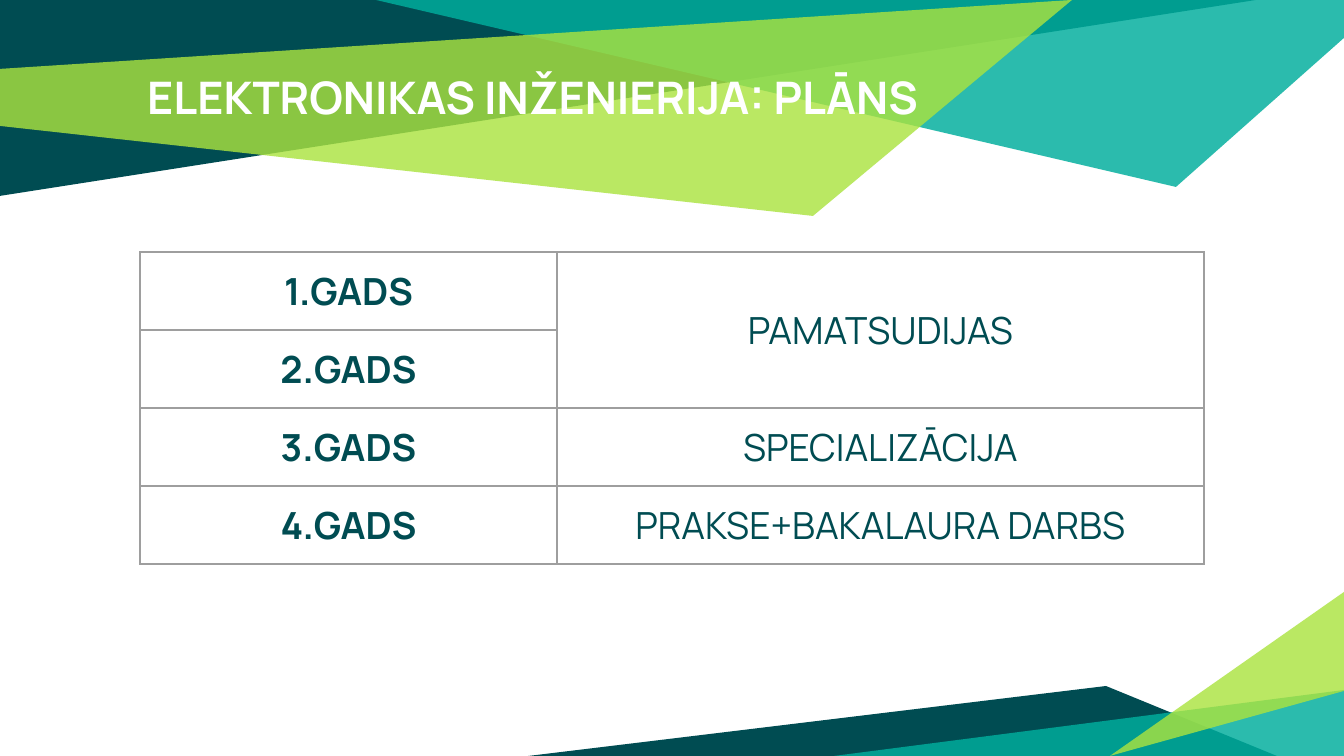
"""Build the study plan slide for electronics engineering."""
from lxml import etree
from pptx import Presentation
from pptx.dml.color import RGBColor
from pptx.enum.text import MSO_ANCHOR, PP_ALIGN
from pptx.oxml.ns import qn
from pptx.util import Pt

MIDDLE = MSO_ANCHOR.MIDDLE
CENTER = PP_ALIGN.CENTER
PX = 914400 / 134.4
FONT = "Manrope"
DARK, TEAL, LIME = "004C52", "00AE9D", "ABE33F"
WHITE, GREY = "FFFFFF", "9E9E9E"
PAD = round(13.44 * PX)


def paint(fill, color):
    fill.solid()
    fill.fore_color.rgb = RGBColor.from_string(color)


def write(para, text, size, color, bold):
    run = para.add_run()
    run.text = text
    run.font.name = FONT
    run.font.size = Pt(size)
    run.font.bold = bold
    paint(run.font.fill, color)


deck = Presentation()
deck.slide_width, deck.slide_height = round(1344 * PX), round(756 * PX)
slide = deck.slides.add_slide(deck.slide_layouts[6])
paint(slide.background.fill, WHITE)

shards = [
    (DARK, 100, [(0, 0), (0, 196), (1256, 0)]),
    (TEAL, 83, [(376, 0), (1176, 187), (1344, 38), (1344, 0)]),
    (LIME, 81, [(0, 69), (0, 126), (813, 216), (1072, 0)]),
    (DARK, 100, [(528, 756), (1277, 756), (1106, 686)]),
    (TEAL, 83, [(1344, 690), (1344, 756), (834, 756)]),
    (LIME, 81, [(1344, 691), (1344, 592), (1110, 756)]),
]
for color, alpha, points in shards:
    pen = slide.shapes.build_freeform(*points[0], scale=PX)
    pen.add_line_segments(points[1:], close=True)
    shard = pen.convert_to_shape()
    shard.shadow.inherit = False
    shard.line.fill.background()
    paint(shard.fill, color)
    if alpha < 100:
        tint = shard.fill._xPr.find(qn("a:solidFill"))[0]
        etree.SubElement(tint, qn("a:alpha"), val=str(alpha * 1000))

box = [round(n * PX) for n in (134, 56, 1083, 126)]
title = slide.shapes.add_textbox(*box).text_frame
title.word_wrap = True
title.margin_left = title.margin_right = PAD
title.margin_top = title.margin_bottom = PAD
write(title.paragraphs[0], "ELEKTRONIKAS INŽENIERIJA: PLĀNS", 24, WHITE, True)

rows = [
    ("1.GADS", "PAMATSUDIJAS"),
    ("2.GADS", ""),
    ("3.GADS", "SPECIALIZĀCIJA"),
    ("4.GADS", "PRAKSE+BAKALAURA DARBS"),
]
box = [round(n * PX) for n in (140, 252, 1064, 312)]
table = slide.shapes.add_table(len(rows), 2, *box).table
table.first_row = table.horz_banding = False
for col, width in zip(table.columns, (417, 647)):
    col.width = round(width * PX)
for r, texts in enumerate(rows):
    table.rows[r].height = round(78 * PX)
    for c, text in enumerate(texts):
        cell = table.cell(r, c)
        cell.margin_left = cell.margin_right = PAD
        cell.margin_top = cell.margin_bottom = PAD
        cell.fill.background()
        props = cell._tc.get_or_add_tcPr()
        for i, side in enumerate(("lnL", "lnR", "lnT", "lnB")):
            edge = etree.Element(qn("a:" + side), w=str(Pt(0.75)))
            fill = etree.SubElement(edge, qn("a:solidFill"))
            etree.SubElement(fill, qn("a:srgbClr"), val=GREY)
            props.insert(i, edge)
        if text:
            para = cell.text_frame.paragraphs[0]
            para.alignment = CENTER
            para.space_before = Pt(6)
            write(para, text, 20, DARK, c == 0)
table.cell(0, 1).merge(table.cell(1, 1))
table.cell(0, 1).vertical_anchor = MIDDLE

deck.save("out.pptx")
